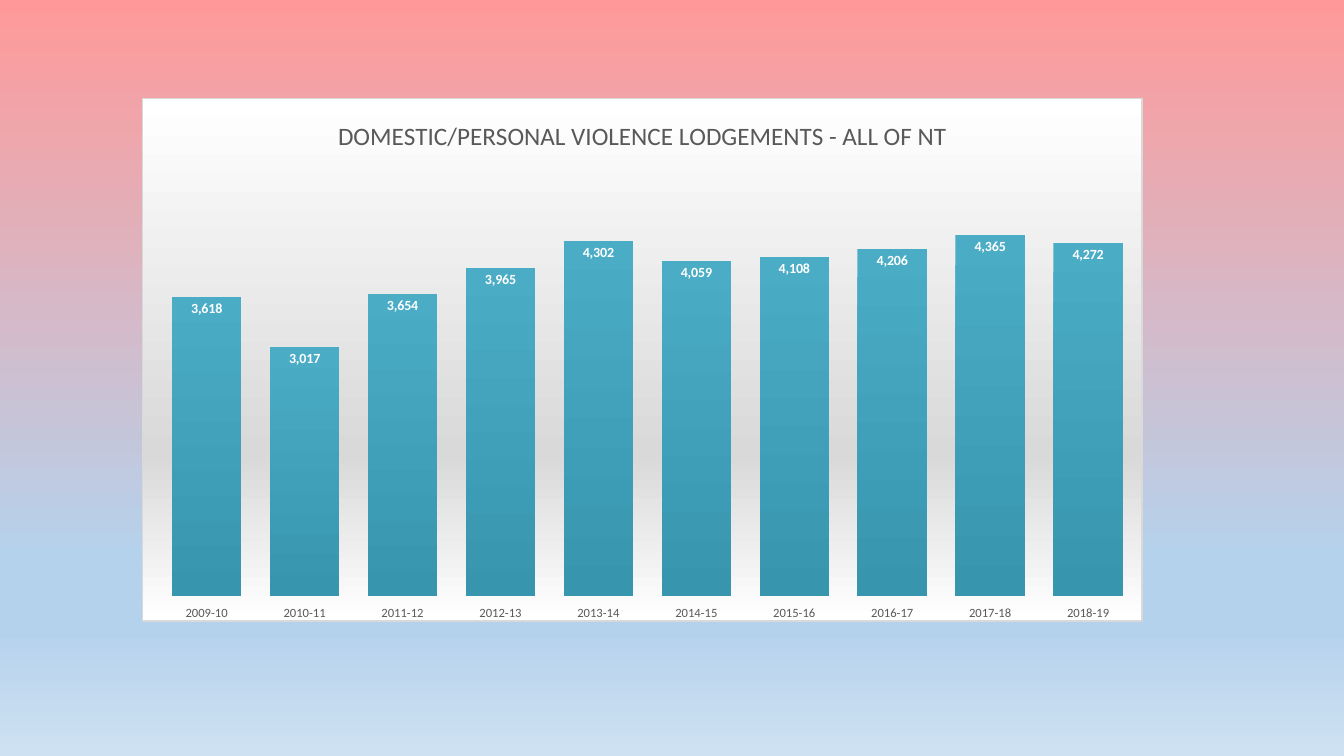
import lxml.etree
import pptx
import pptx.chart.data
import pptx.dml.color
import pptx.enum.chart
import pptx.oxml
import pptx.oxml.ns
import pptx.util
from pptx.util import Cm, Pt

HEADING = "DOMESTIC/PERSONAL VIOLENCE LODGEMENTS - ALL OF NT"
LODGEMENTS = {
    "2009-10": 3618, "2010-11": 3017, "2011-12": 3654, "2012-13": 3965,
    "2013-14": 4302, "2014-15": 4059, "2015-16": 4108, "2016-17": 4206,
    "2017-18": 4365, "2018-19": 4272,
}
THEME = {
    "font": "Calibri",
    "heading": (18, "595959", False),
    "years": (9, "595959", False),
    "counts": (10, "FFFFFF", True),
    "base": (10, "000000", False),
    "backdrop": [(0, "FF9999"), (74, "B5D2EC"), (83, "B5D2EC"), (100, "CEE1F2")],
    "panel": [(0, "FFFFFF"), (68, "D9D9D9"), (100, "FFFFFF")],
    "columns": [(0, "4BACC6"), (100, "3795AE")],
    "border": "D9D9D9",
}
PANEL = (Cm(3.58), Cm(2.46), Cm(25.22), Cm(13.21))
PLOT = {"x": 0.015, "y": 0.083, "w": 0.98, "h": 0.869}
AXIS_STEP = 1100
AXIS_STEPS = 5
NAMESPACES = pptx.oxml.ns.nsdecls("a", "c")
qn = pptx.oxml.ns.qn


def style_font(font, role):
    size, colour, bold = THEME[role]
    font.name = THEME["font"]
    font.size = Pt(size)
    font.bold = bold
    font.color.rgb = pptx.dml.color.RGBColor.from_string(colour)


def gradient_xml(stops):
    """Return a top-to-bottom gradient through (percent, colour) stops."""
    marks = "".join(
        f'<a:gs pos="{percent * 1000}"><a:srgbClr val="{colour}"/></a:gs>'
        for percent, colour in stops)
    return (f'<a:gradFill {NAMESPACES} rotWithShape="1"><a:gsLst>{marks}</a:gsLst>'
            '<a:lin ang="5400000" scaled="0"/></a:gradFill>')


def set_gradient(fill, owner, stops):
    """Give fill, held somewhere inside the owner element, a gradient."""
    fill.solid()
    solid = owner.find(".//" + qn("a:solidFill"))
    solid.getparent().replace(solid, pptx.oxml.parse_xml(gradient_xml(stops)))


def set_panel(chart):
    """Fill and outline the whole chart area."""
    panel = pptx.oxml.parse_xml(
        f'<c:spPr {NAMESPACES}>{gradient_xml(THEME["panel"])}'
        f'<a:ln w="{Pt(1)}"><a:solidFill><a:srgbClr val="{THEME["border"]}"/>'
        '</a:solidFill></a:ln></c:spPr>')
    chart.element.find(qn("c:chart")).addnext(panel)


def set_plot_layout(chart):
    """Fix the inner plot area as fractions of the chart."""
    plot_area = chart.element.find(".//" + qn("c:plotArea"))
    for automatic in plot_area.findall(qn("c:layout")):
        plot_area.remove(automatic)
    modes = '<c:xMode val="edge"/><c:yMode val="edge"/>'
    places = "".join(f'<c:{side} val="{part}"/>' for side, part in PLOT.items())
    plot_area.insert(0, pptx.oxml.parse_xml(
        f'<c:layout {NAMESPACES}><c:manualLayout><c:layoutTarget val="inner"/>'
        f'{modes}{places}</c:manualLayout></c:layout>'))


def style_axes(chart):
    years, counts = chart.category_axis, chart.value_axis
    for axis in (years, counts):
        axis.has_major_gridlines = False
        axis.major_tick_mark = pptx.enum.chart.XL_TICK_MARK.NONE
        axis.minor_tick_mark = pptx.enum.chart.XL_TICK_MARK.NONE
        axis.format.line.fill.background()
    years.tick_label_position = pptx.enum.chart.XL_TICK_LABEL_POSITION.LOW
    style_font(years.tick_labels.font, "years")
    counts.tick_label_position = pptx.enum.chart.XL_TICK_LABEL_POSITION.NONE
    counts.minimum_scale = 0
    counts.maximum_scale = AXIS_STEP * AXIS_STEPS
    counts.major_unit = AXIS_STEP


def style_columns(plot):
    plot.gap_width = 41
    plot.vary_by_categories = False
    columns = plot.series[0]
    columns.invert_if_negative = False
    set_gradient(columns.format.fill, columns.format.element
                 if hasattr(columns.format, "element") else plot.series[0]._element,
                 THEME["columns"])
    labels = columns.data_labels
    labels.show_value = True
    labels.position = pptx.enum.chart.XL_LABEL_POSITION.INSIDE_END
    labels.number_format = "#,##0"
    labels.number_format_is_linked = False
    style_font(labels.font, "counts")


def add_lodgements_chart(slide):
    lodgements = pptx.chart.data.CategoryChartData(number_format="#,##0")
    lodgements.categories = list(LODGEMENTS)
    lodgements.add_series("Series 1", list(LODGEMENTS.values()))
    chart = slide.shapes.add_chart(
        pptx.enum.chart.XL_CHART_TYPE.COLUMN_CLUSTERED, *PANEL, lodgements).chart
    style_font(chart.font, "base")
    chart.has_legend = False
    chart.has_title = True
    heading = chart.chart_title.text_frame.paragraphs[0].add_run()
    heading.text = HEADING
    style_font(heading.font, "heading")
    chart.chart_title.include_in_layout = True
    overlay = chart.chart_title._element.find(qn("c:overlay"))
    if overlay is not None:
        overlay.set("val", "1")
    style_axes(chart)
    style_columns(chart.plots[0])
    set_panel(chart)
    set_plot_layout(chart)


def main():
    deck = pptx.Presentation()
    deck.slide_width, deck.slide_height = Cm(33.87), Cm(19.05)
    slide = deck.slides.add_slide(deck.slide_layouts[6])
    set_gradient(slide.background.fill, slide.element, THEME["backdrop"])
    add_lodgements_chart(slide)
    deck.save("out.pptx")


if __name__ == "__main__":
    main()
